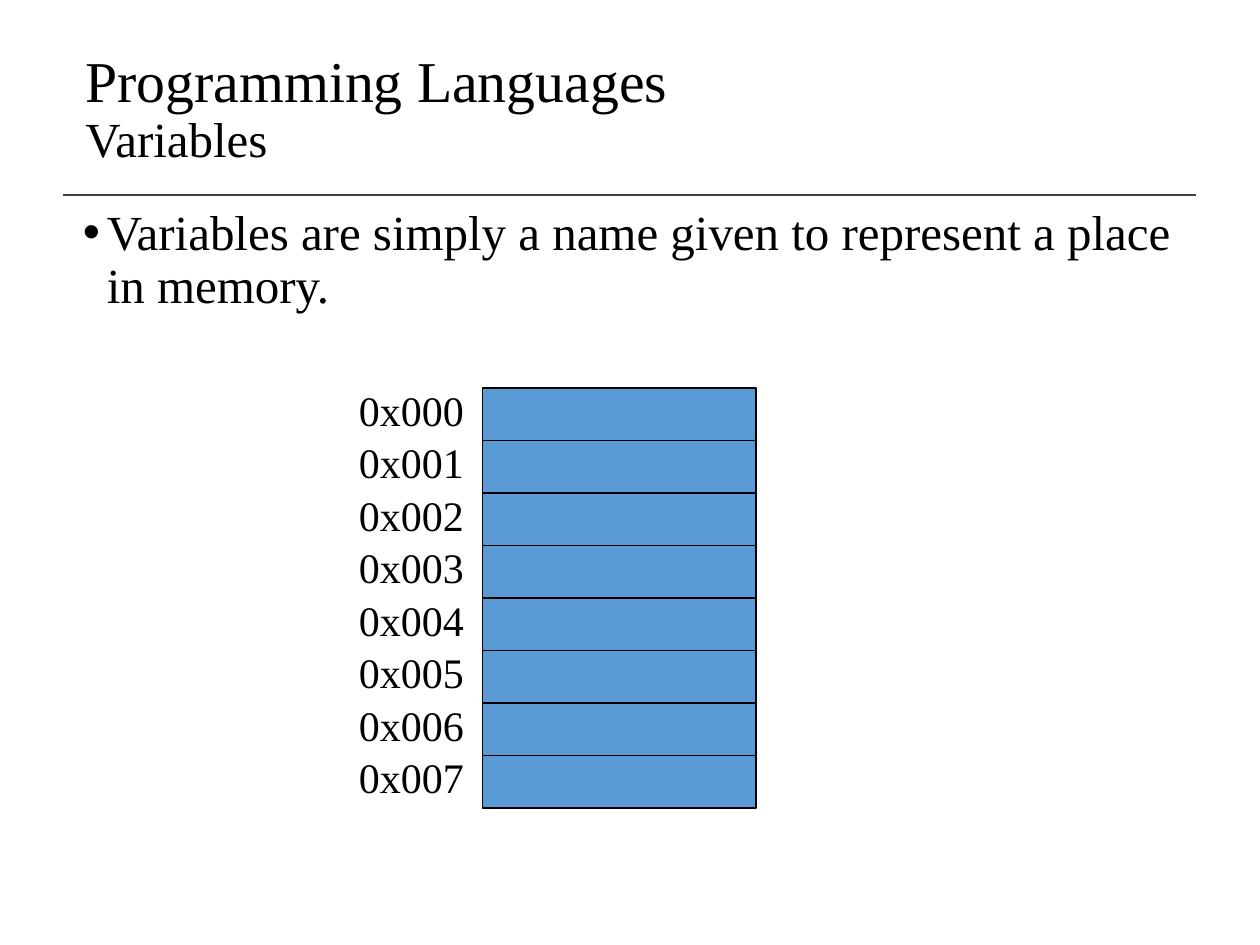
import pptx
import pptx.util
import pptx.dml.color
import pptx.enum.shapes
import pptx.enum.text
import pptx.oxml.ns
import lxml.etree

TITLE = [("Programming Languages", 33), ("Variables", 28)]
STATEMENT = [("Variables are simply a name given to represent a place in memory.", 28)]
ADDRESSES = [f"0x{number:03}" for number in range(8)]

FONT = "Times New Roman"
INK, RULE, CELL = "000000", "404040", "5B9BD5"
CELL_LEFT, CELL_TOP, CELL_WIDTH = 3.83, 3.08, 2.17
ROW_HEIGHT = 5 / 12
LABEL_LEFT, LABEL_WIDTH, LABEL_HEIGHT = 2.75, 1.03, 0.5
LABEL_RISE = 0.08

inch, point = pptx.util.Inches, pptx.util.Pt
anchors = pptx.enum.text.MSO_ANCHOR


def colour(value):
    return pptx.dml.color.RGBColor.from_string(value)


def assign(target, values):
    for name, value in values.items():
        setattr(target, name, value)


def add_text(shapes, place, lines, frame_format, para_format):
    """Add one paragraph whose (text, size) lines are parted by line breaks."""
    box = shapes.add_textbox(*map(inch, place))
    assign(box.text_frame, frame_format)
    para = box.text_frame.paragraphs[0]
    assign(para, para_format)
    for index, (text, size) in enumerate(lines):
        if index:
            para.add_line_break()
        span = para.add_run()
        span.text = text
        assign(span.font, {"name": FONT, "size": point(size)})
        span.font.color.rgb = colour(INK)
    return para


def add_bullet(para, indent):
    props = para._p.get_or_add_pPr()
    props.set("marL", str(inch(indent)))
    props.set("indent", str(-inch(indent)))
    for tag, key, value in (("a:buFont", "typeface", "Arial"), ("a:buChar", "char", "•")):
        lxml.etree.SubElement(props, pptx.oxml.ns.qn(tag)).set(key, value)


def add_rule(page):
    ends = map(inch, (0.5, 1.55, 9.49, 1.55))
    rule = page.shapes.add_connector(pptx.enum.shapes.MSO_CONNECTOR.STRAIGHT, *ends)
    rule.line.color.rgb = colour(RULE)
    rule.line.width = point(1)
    lxml.etree.SubElement(rule._element.spPr, pptx.oxml.ns.qn("a:effectLst"))


def add_memory(page):
    """Draw a column of memory cells with an address beside each."""
    group = page.shapes.add_group_shape()
    tops = [CELL_TOP + row * ROW_HEIGHT for row in range(len(ADDRESSES))]
    for top in tops:
        cell = group.shapes.add_shape(
            pptx.enum.shapes.MSO_SHAPE.RECTANGLE,
            *map(inch, (CELL_LEFT, top, CELL_WIDTH, ROW_HEIGHT)))
        cell.shadow.inherit = False
        cell.fill.solid()
        cell.fill.fore_color.rgb = colour(CELL)
        cell.line.color.rgb = colour(INK)
        cell.line.width = point(0.75)
    label_format = {"word_wrap": False,
                    "auto_size": pptx.enum.text.MSO_AUTO_SIZE.SHAPE_TO_FIT_TEXT}
    for top, address in zip(tops, ADDRESSES):
        place = (LABEL_LEFT, top - LABEL_RISE, LABEL_WIDTH, LABEL_HEIGHT)
        add_text(group.shapes, place, [(address, 24)], label_format, {})


def main():
    deck = pptx.Presentation()
    assign(deck, {"slide_width": inch(10), "slide_height": inch(7.5)})
    page = deck.slides.add_slide(deck.slide_layouts[6])
    add_rule(page)
    add_text(page.shapes, (0.58, 0.33, 9.42, 1.09), TITLE,
             {"word_wrap": True, "vertical_anchor": anchors.MIDDLE},
             {"line_spacing": 0.9})
    statement = add_text(page.shapes, (0.56, 1.6, 9.07, 1.29), STATEMENT,
                         {"word_wrap": True, "vertical_anchor": anchors.TOP},
                         {"line_spacing": 0.9, "space_before": point(7.5)})
    add_bullet(statement, 0.19)
    add_memory(page)
    deck.save("out.pptx")


if __name__ == "__main__":
    main()
